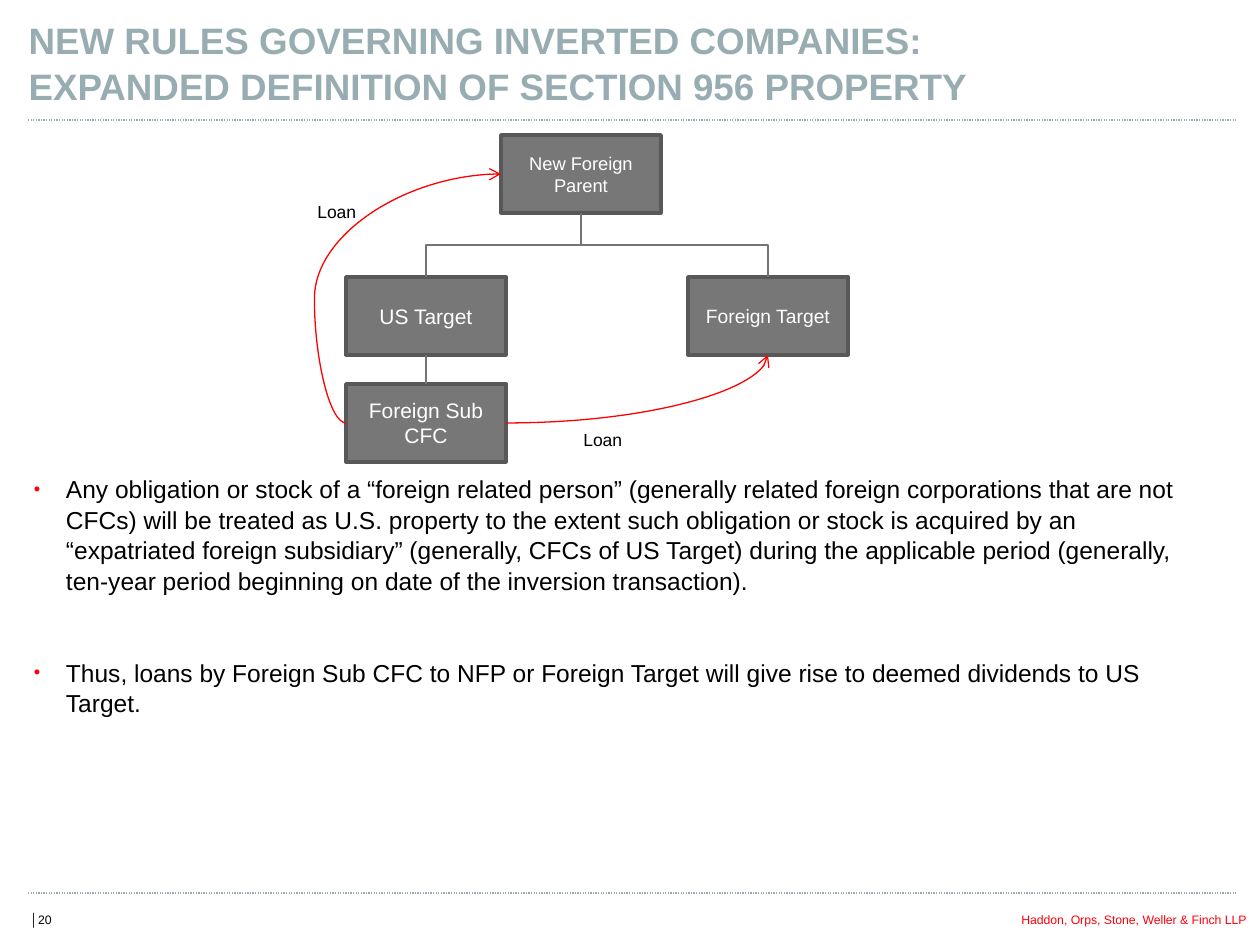
import dataclasses

import pptx
import pptx.dml.color
import pptx.enum.dml
import pptx.enum.shapes
import pptx.enum.text
import pptx.oxml.ns
import pptx.util
from lxml import etree

PX = 914400 / 126
ALIGN = pptx.enum.text.PP_ALIGN
ANCHOR = pptx.enum.text.MSO_ANCHOR
CONNECTOR = pptx.enum.shapes.MSO_CONNECTOR
TOP, LEFT, BOTTOM, RIGHT = range(4)


@dataclasses.dataclass(frozen=True)
class Theme:
    font: str = "Arial"
    heading: str = "98ADB2"
    text: str = "000000"
    accent: str = "FE000C"
    loan: str = "FF0000"
    node: str = "777777"
    node_edge: str = "585858"
    node_text: str = "FFFFFF"
    ownership: str = "747474"
    title_size: float = 21
    body_size: float = 14
    label_size: float = 10
    footer_size: float = 7
    line_spacing: float = 1.04


THEME = Theme()


def emu(px):
    return round(px * PX)


def rgb(value):
    return pptx.dml.color.RGBColor.from_string(value)


def place(part, box):
    part.left, part.top, part.width, part.height = map(emu, box)


def add_child(parent, tag, **attributes):
    return etree.SubElement(parent, pptx.oxml.ns.qn(tag), **attributes)


def add_bullet(paragraph):
    properties = paragraph._p.get_or_add_pPr()
    properties.set("marL", str(emu(38)))
    properties.set("indent", str(emu(-32)))
    add_child(add_child(properties, "a:buClr"), "a:srgbClr", val=THEME.accent)
    add_child(properties, "a:buSzPct", val="75000")
    add_child(properties, "a:buFont", typeface=THEME.font)
    add_child(properties, "a:buChar", char="•")


def write(frame, text, size, color=THEME.text, bold=False, align=ALIGN.LEFT,
          anchor=ANCHOR.TOP, wrap=True, bullet=False, gap=0, spacing=None):
    frame.auto_size = pptx.enum.text.MSO_AUTO_SIZE.NONE
    frame.word_wrap = wrap
    frame.vertical_anchor = anchor
    for index, line in enumerate(text.split("\n")):
        paragraph = frame.add_paragraph() if index else frame.paragraphs[0]
        if bullet:
            add_bullet(paragraph)
        paragraph.alignment = align
        paragraph.space_before = pptx.util.Pt(gap if index else 0)
        if spacing:
            paragraph.line_spacing = spacing
        run = paragraph.add_run()
        run.text = line
        run.font.name = THEME.font
        run.font.size = pptx.util.Pt(size)
        run.font.bold = bold
        run.font.color.rgb = rgb(color)


def add_label(slide, box, text, size, **style):
    label = slide.shapes.add_textbox(*map(emu, box))
    write(label.text_frame, text, size, **style)


def style_line(connector, color):
    connector.line.color.rgb = rgb(color)
    connector.line.width = pptx.util.Pt(0.75)
    add_child(connector._element.spPr, "a:effectLst")


def add_rule(slide, left, top, width):
    rule = slide.shapes.add_connector(
        CONNECTOR.STRAIGHT, *map(emu, (left, top, left + width, top)))
    style_line(rule, THEME.heading)
    rule.line.dash_style = pptx.enum.dml.MSO_LINE.ROUND_DOT


def add_node(slide, box, text, size):
    node = slide.shapes.add_shape(
        pptx.enum.shapes.MSO_SHAPE.RECTANGLE, *map(emu, box))
    node.shadow.inherit = False
    node.fill.solid()
    node.fill.fore_color.rgb = rgb(THEME.node)
    node.line.color.rgb = rgb(THEME.node_edge)
    node.line.width = pptx.util.Pt(2)
    write(node.text_frame, text, size, color=THEME.node_text,
          align=ALIGN.CENTER, anchor=ANCHOR.MIDDLE)
    return node


def join(slide, kind, start, start_side, end, end_side, color):
    connector = slide.shapes.add_connector(kind, 0, 0, 0, 0)
    connector.begin_connect(start, start_side)
    connector.end_connect(end, end_side)
    style_line(connector, color)
    return connector


def add_branch(slide, parent, child):
    branch = join(slide, CONNECTOR.ELBOW, parent, BOTTOM, child, TOP,
                  THEME.ownership)
    rightward = branch.end_x > branch.begin_x
    span, drop = branch.width, branch.height
    center_x, center_y = branch.left + span // 2, branch.top + drop // 2
    branch.left, branch.top = center_x - drop // 2, center_y - span // 2
    branch.width, branch.height = drop, span
    transform = branch._element.spPr.find(pptx.oxml.ns.qn("a:xfrm"))
    transform.set("rot", str((270 if rightward else 90) * 60000))
    transform.set("flipH", "1" if rightward else "0")


def add_loan(slide, lender, lender_side, borrower, borrower_side, preset,
             bend=None):
    loan = join(slide, CONNECTOR.CURVE, lender, lender_side, borrower,
                borrower_side, THEME.loan)
    geometry = loan._element.spPr.find(pptx.oxml.ns.qn("a:prstGeom"))
    geometry.set("prst", preset)
    if bend is not None:
        add_child(geometry.find(pptx.oxml.ns.qn("a:avLst")), "a:gd",
                  name="adj1", fmla=f"val {bend}")
    add_child(loan.line._get_or_add_ln(), "a:tailEnd", type="arrow")


def build_header(slide, box):
    left, top, width, height = box
    place(slide.shapes.title, (left - 12, top, 1072, height - 12))
    write(slide.shapes.title.text_frame,
          "NEW RULES GOVERNING INVERTED COMPANIES: "
          "EXPANDED DEFINITION OF SECTION 956 PROPERTY",
          THEME.title_size, color=THEME.heading, bold=True,
          anchor=ANCHOR.MIDDLE, spacing=THEME.line_spacing)
    add_rule(slide, left, top + height, width)


def build_structure(slide, box):
    left, top, width, height = box
    node_width, node_height = 160, 78

    def node(x, y, text, size):
        return add_node(slide, (left + x, top + y, node_width, node_height),
                        text, size)

    foreign_sub = node(41, height - node_height, "Foreign Sub\nCFC", 12)
    foreign_target = node(width - node_width, 142, "Foreign Target", 11)
    new_parent = node(196, 0, "New Foreign Parent", 10.5)
    us_target = node(41, 142, "US Target", 12)

    for target in (us_target, foreign_target):
        add_branch(slide, new_parent, target)
    join(slide, CONNECTOR.STRAIGHT, us_target, BOTTOM, foreign_sub, TOP,
         THEME.ownership)
    add_loan(slide, foreign_sub, LEFT, new_parent, LEFT, "curvedConnector3",
             bend=-20400)
    add_loan(slide, foreign_sub, RIGHT, foreign_target, BOTTOM,
             "curvedConnector2")
    for x, y in ((0, 60), (266, 288)):
        add_label(slide, (left + x, top + y, 64, 34), "Loan",
                  THEME.label_size, wrap=False)


def build_points(slide, box):
    points = slide.placeholders[1]
    place(points, box)
    frame = points.text_frame
    frame.margin_left = frame.margin_right = 0
    frame.margin_top = frame.margin_bottom = 0
    write(frame,
          "Any obligation or stock of a “foreign related person” (generally "
          "related foreign corporations that are not CFCs) will be treated as "
          "U.S. property to the extent such obligation or stock is acquired by "
          "an “expatriated foreign subsidiary” (generally, CFCs of US Target) "
          "during the applicable period (generally, ten-year period beginning "
          "on date of the inversion transaction).\n"
          "Thus, loans by Foreign Sub CFC to NFP or Foreign Target will give "
          "rise to deemed dividends to US Target.",
          THEME.body_size, bullet=True, gap=35, spacing=THEME.line_spacing)


def build_footer(slide, box):
    left, top, width, height = box
    add_rule(slide, left, top, width)
    add_label(slide, (left - 10, top + 13, 646, height), "│20",
              THEME.footer_size)
    add_label(slide, (left + width - 408, top + 13, 430, height),
              "Haddon, Orps, Stone, Weller & Finch LLP", THEME.footer_size,
              color=THEME.accent, align=ALIGN.RIGHT)


def main():
    deck = pptx.Presentation()
    deck.slide_width, deck.slide_height = emu(1260), emu(945)
    slide = deck.slides.add_slide(deck.slide_layouts[1])
    build_header(slide, (28, 16, 1209, 104))
    build_structure(slide, (305, 135, 543, 327))
    build_points(slide, (28, 473, 1165, 400))
    build_footer(slide, (28, 893, 1209, 28))
    deck.save("out.pptx")


if __name__ == "__main__":
    main()
